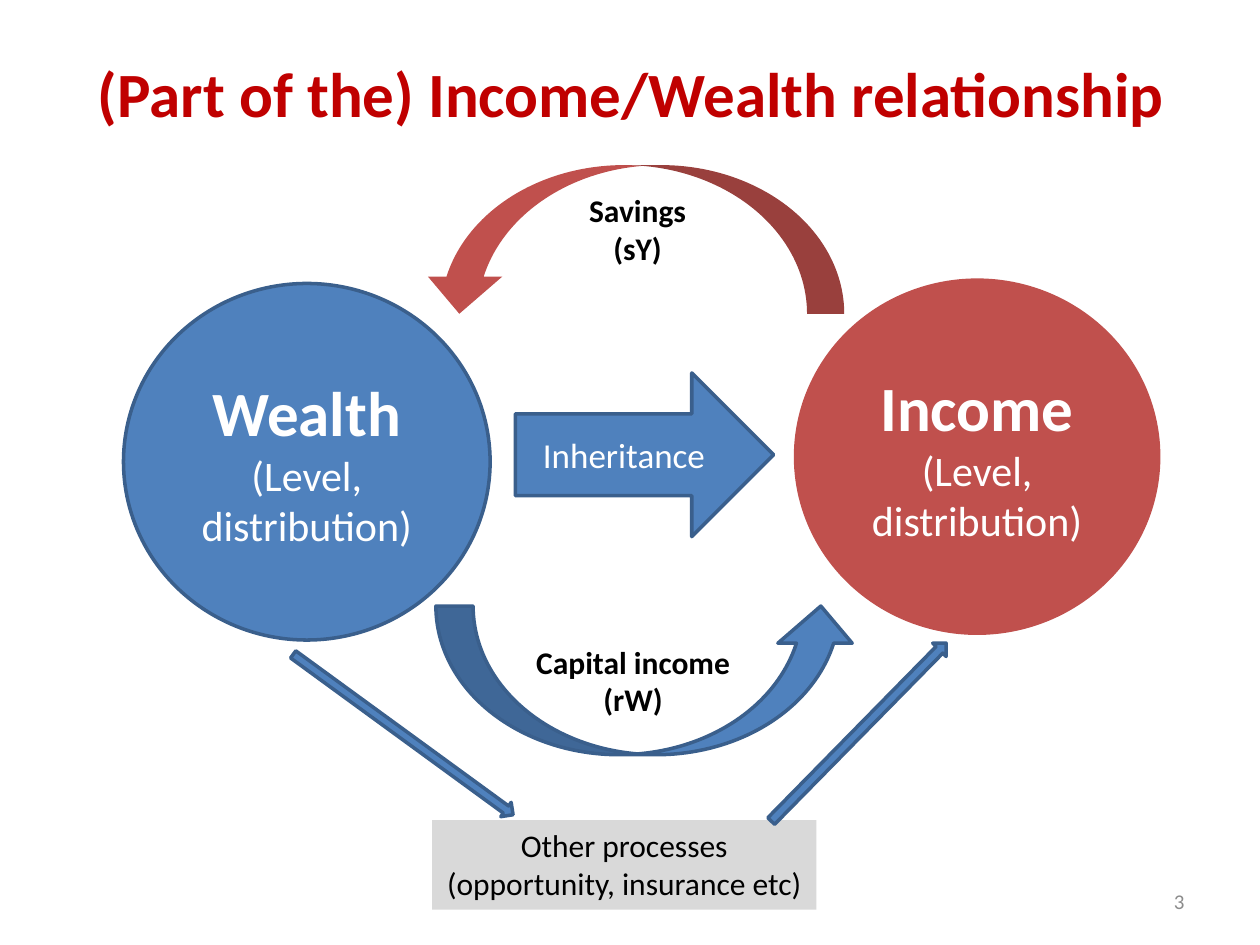
import pptx
import pptx.util
import pptx.dml.color
import pptx.enum.shapes
import pptx.enum.text

RGB = pptx.dml.color.RGBColor
KIND = pptx.enum.shapes.MSO_SHAPE
ALIGN = pptx.enum.text.PP_ALIGN
MID = pptx.enum.text.MSO_ANCHOR.MIDDLE
TOP = pptx.enum.text.MSO_ANCHOR.TOP

BLUE = RGB(0x4F, 0x81, 0xBD)
NAVY = RGB(0x3A, 0x5F, 0x8C)
RED = RGB(0xC0, 0x50, 0x4D)
DARK = RGB(0xC0, 0x00, 0x00)
PALE = RGB(0xD9, 0xD9, 0xD9)
GRAY = RGB(0x8C, 0x8C, 0x8C)
WHITE = RGB(0xFF, 0xFF, 0xFF)
BLACK = RGB(0x00, 0x00, 0x00)
PX = 9144

deck = pptx.Presentation()
deck.slide_width = 1000 * PX
deck.slide_height = 750 * PX
slide = deck.slides.add_slide(deck.slide_layouts[6])


def write(shape, lines, color, anchor=MID, align=ALIGN.CENTER, wrap=True):
    frame = shape.text_frame
    frame.word_wrap = wrap
    frame.vertical_anchor = anchor
    for i, (text, size, bold) in enumerate(lines):
        para = frame.add_paragraph() if i else frame.paragraphs[0]
        para.alignment = align
        run = para.add_run()
        run.text = text
        run.font.name = "Calibri"
        run.font.size = pptx.util.Pt(size)
        run.font.bold = bold
        run.font.color.rgb = color


def draw(kind, box, fill, edge=None, turn=0):
    shape = slide.shapes.add_shape(kind, *[n * PX for n in box])
    shape.shadow.inherit = False
    shape.rotation = turn
    shape.fill.solid()
    shape.fill.fore_color.rgb = fill
    if edge is None:
        shape.line.fill.background()
    else:
        shape.line.color.rgb = edge
        shape.line.width = pptx.util.Pt(2)
    return shape


for name, left, top, fill, edge in [
    ("Wealth", 98, 225, BLUE, NAVY),
    ("Income", 630, 221, RED, None),
]:
    stock = draw(KIND.OVAL, (left, top, 291, 283), fill, edge)
    write(stock, [(name, 36, True), ("(Level, distribution)", 24, False)], WHITE)

gift = draw(KIND.RIGHT_ARROW, (409, 296, 205, 130), BLUE, NAVY)
write(gift, [("Inheritance", 20, False)], WHITE)

draw(KIND.CURVED_UP_ARROW, (346, 481, 335, 118), BLUE, NAVY)
draw(KIND.CURVED_UP_ARROW, (335, 131, 335, 118), RED, turn=180)

other = draw(KIND.RECTANGLE, (343, 651, 305, 71), PALE)
write(
    other,
    [("Other processes", 18, False), ("(opportunity, insurance etc)", 18, False)],
    BLACK, TOP, wrap=False,
)

for box, turn in [((313, 475, 14, 216), 306.1), ((674, 482, 15, 198), 224.5)]:
    draw(KIND.DOWN_ARROW, box, BLUE, NAVY, turn)

title = [("(Part of the) Income/Wealth relationship", 36, True)]
capital = [("Capital income", 18, True), ("(rW)", 18, True)]
savings = [("Savings", 18, True), ("(sY)", 18, True)]
for box, lines, color, anchor, align, wrap in [
    ((51, 17, 900, 113), title, DARK, MID, ALIGN.CENTER, True),
    ((415, 505, 175, 71), capital, BLACK, TOP, ALIGN.CENTER, False),
    ((457, 147, 98, 71), savings, BLACK, TOP, ALIGN.CENTER, False),
    ((717, 695, 233, 40), [("3", 12, False)], GRAY, MID, ALIGN.RIGHT, True),
]:
    label = slide.shapes.add_textbox(*[n * PX for n in box])
    write(label, lines, color, anchor, align, wrap)

deck.save("out.pptx")
